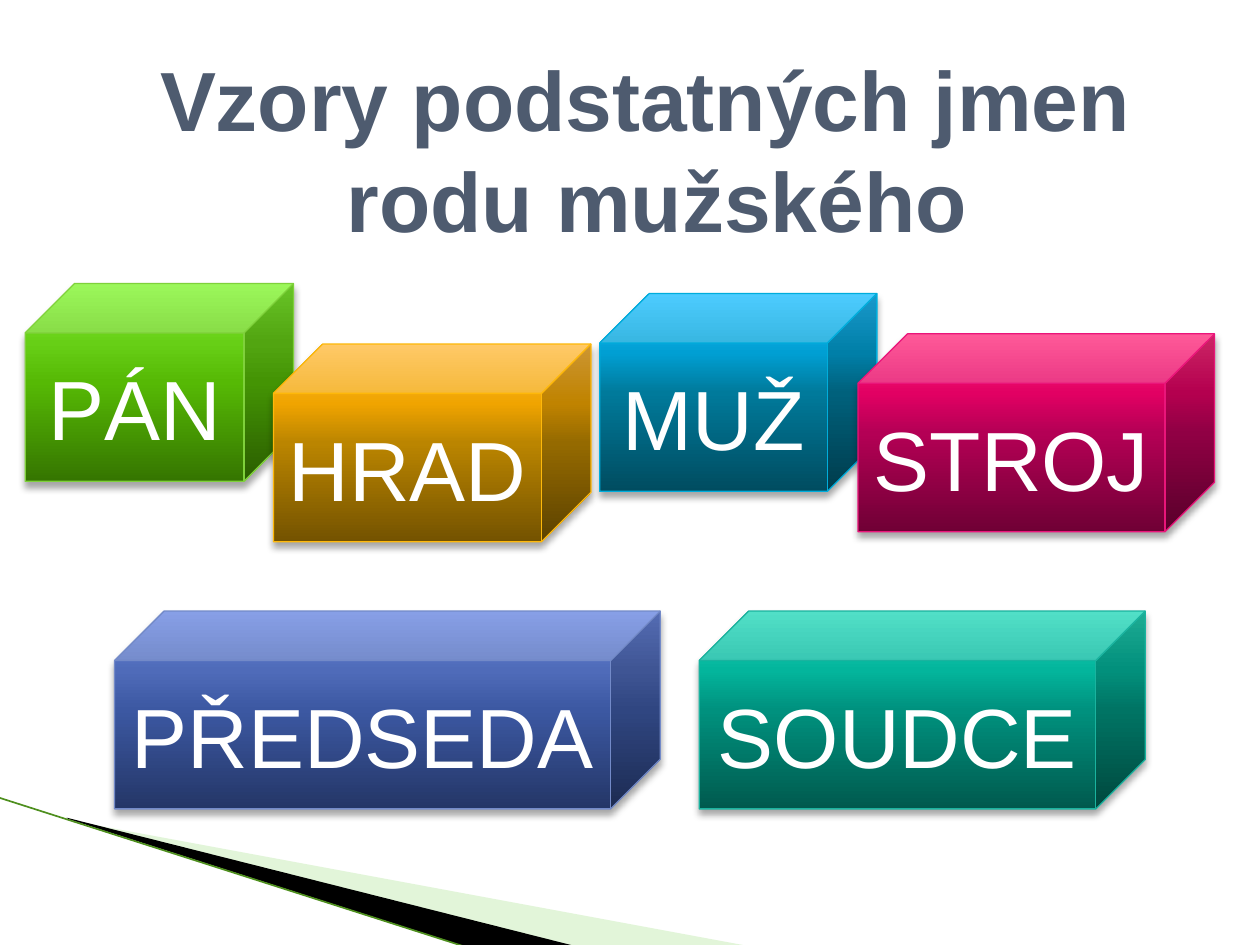
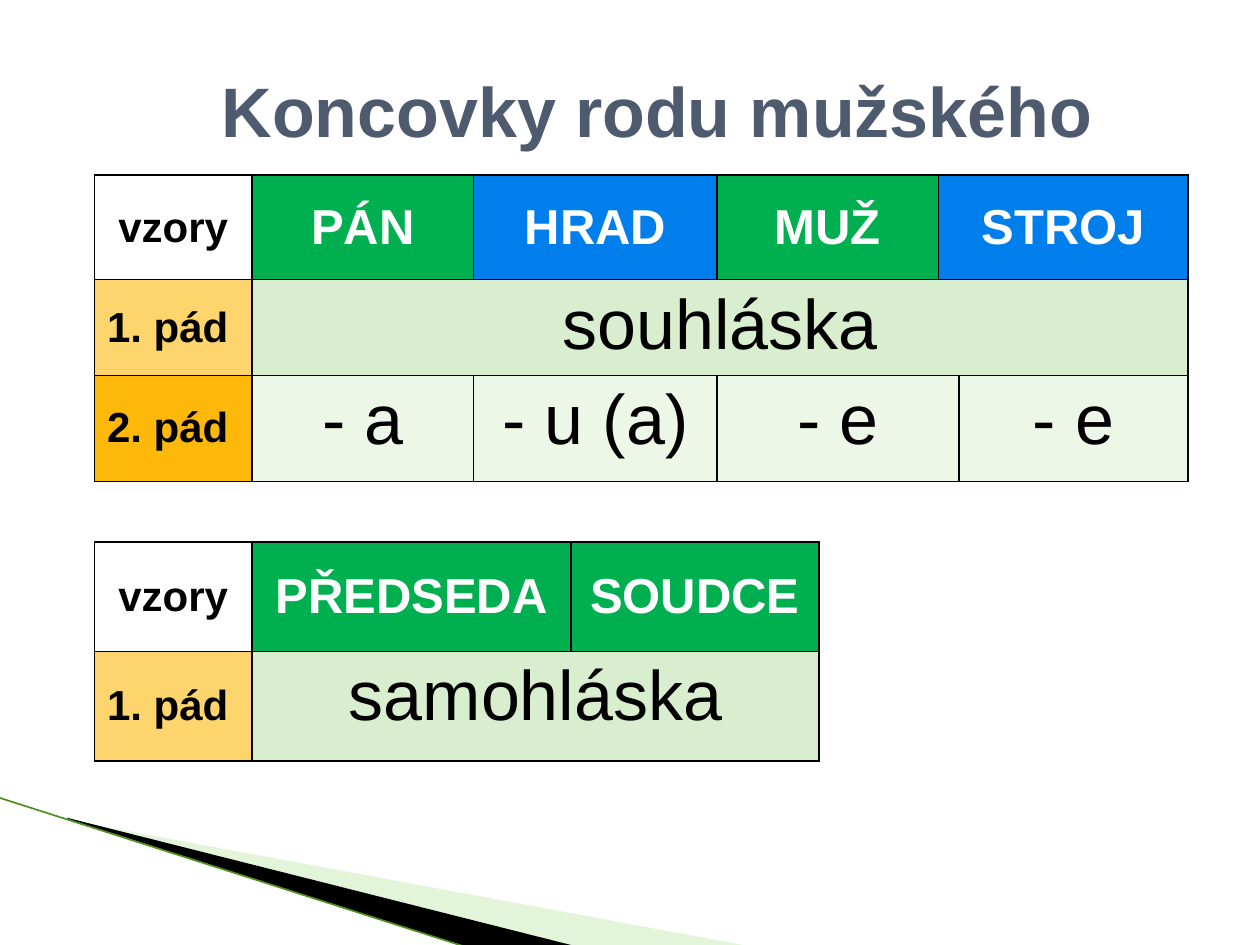
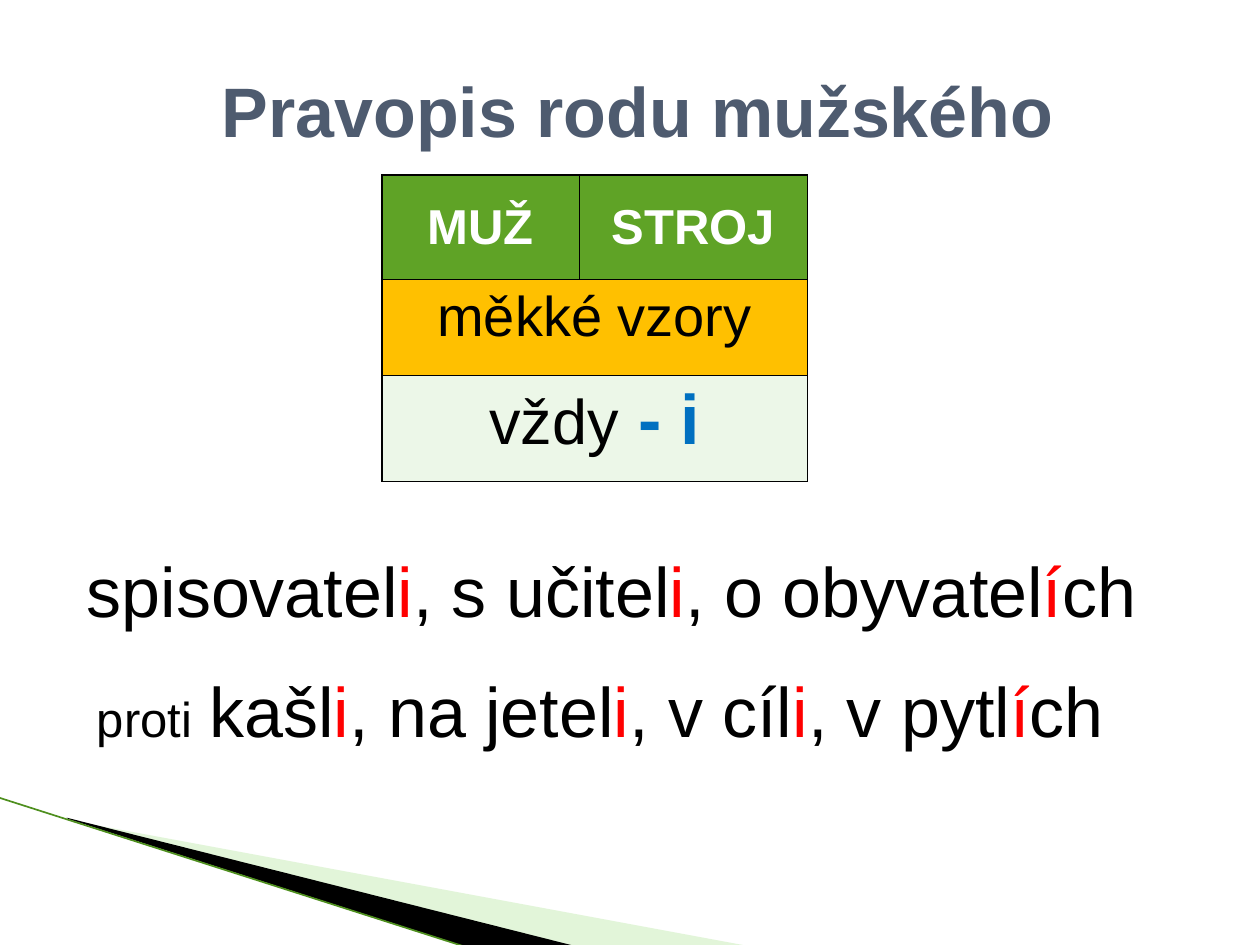
from dataclasses import dataclass
from itertools import cycle

from lxml.etree import SubElement
from pptx import Presentation
from pptx.dml.color import RGBColor
from pptx.enum.shapes import MSO_CONNECTOR, MSO_SHAPE
from pptx.enum.text import MSO_ANCHOR, MSO_AUTO_SIZE, PP_ALIGN
from pptx.oxml.ns import qn
from pptx.util import Inches, Pt

FONT = "Arial"
BLACK = RGBColor(0x00, 0x00, 0x00)
WHITE = RGBColor(0xFF, 0xFF, 0xFF)
SLATE = RGBColor(0x4E, 0x5B, 0x6F)
RED = RGBColor(0xFF, 0x00, 0x00)
BLUE = RGBColor(0x00, 0x70, 0xC0)
SKY = RGBColor(0x00, 0x7E, 0xEB)
GREEN = RGBColor(0x00, 0xB0, 0x50)
LEAF = RGBColor(0x5F, 0xA3, 0x26)
MINT = RGBColor(0xD8, 0xEE, 0xCE)
PALE = RGBColor(0xEC, 0xF7, 0xE8)
SAND = RGBColor(0xFE, 0xD4, 0x6C)
AMBER = RGBColor(0xFE, 0xB8, 0x0A)
GOLD = RGBColor(0xFF, 0xC0, 0x00)
LIME = RGBColor(0xB8, 0xE7, 0xA1)
MOSS = RGBColor(0x4E, 0x8F, 0x1E)

STOPS = (0, 50, 70, 100)
DEPTH = 1.57


@dataclass
class Cube:
    text: str
    left: float
    top: float
    width: float
    shades: str
    edge: str


@dataclass
class Cell:
    text: str
    fill: RGBColor
    size: int = 40
    color: RGBColor = BLACK
    bold: bool = False
    span: int = 1
    mid: bool = False
    align: PP_ALIGN = PP_ALIGN.CENTER


# Text and shared parts
def put(para, text: str, *, size: float, color: RGBColor = BLACK,
        bold: bool = False) -> None:
    for i, line in enumerate(text.split("\n")):
        if i:
            para.add_line_break()
        run = para.add_run()
        run.text = line
        font = run.font
        font.name, font.size, font.bold = FONT, Pt(size), bold
        font.color.rgb = color


def wedge(slide, points: list, fill: RGBColor):
    spots = [(Inches(x), Inches(y)) for x, y in points]
    path = slide.shapes.build_freeform(*spots[0], scale=1.0)
    path.add_line_segments(spots[1:], close=True)
    shape = path.convert_to_shape()
    shape.shadow.inherit = False
    shape.fill.solid()
    shape.fill.fore_color.rgb = fill
    shape.line.fill.background()
    return shape


def band(slide) -> None:
    tint = wedge(slide, [(0.55, 6.51), (5.95, 7.51), (4.56, 7.51), (0.55, 6.5)], LIME)
    clr = tint._element.spPr.find(".//" + qn("a:srgbClr"))
    SubElement(clr, qn("a:alpha"), val="40000")
    wedge(slide, [(0.53, 6.49), (4.57, 7.51), (3.72, 7.52), (0.54, 6.5)], BLACK)
    line = slide.shapes.add_connector(
        MSO_CONNECTOR.STRAIGHT, Inches(-0.01), Inches(6.33), Inches(3.71), Inches(7.52))
    line.line.color.rgb = MOSS
    line.line.width = Pt(0.95)
    SubElement(line._element.spPr, qn("a:effectLst"))


def start(deck, text: str, *, box=(0.43, 0.21, 8.98, 1.25), size: int = 40,
          first: float = 1.23, rest: float = 1.23):
    """Add a slide with the band and a title; first and rest are line indents."""
    slide = deck.slides.add_slide(deck.slide_layouts[5])
    band(slide)
    title = slide.shapes.title
    title.left, title.top, title.width, title.height = map(Inches, box)
    frame = title.text_frame
    frame.auto_size = MSO_AUTO_SIZE.NONE
    frame.vertical_anchor = MSO_ANCHOR.MIDDLE
    frame.margin_top = Inches(0.12)
    para = frame.paragraphs[0]
    para.alignment = PP_ALIGN.LEFT
    para.line_spacing = Pt(size * 1.2)
    props = para._p.get_or_add_pPr()
    props.set("marL", str(Inches(rest)))
    props.set("indent", str(Inches(first - rest)))
    put(para, text, size=size, color=SLATE, bold=True)
    return slide


# Cubes
def block(slide, cube: Cube) -> None:
    shape = slide.shapes.add_shape(
        MSO_SHAPE.CUBE, Inches(cube.left), Inches(cube.top),
        Inches(cube.width), Inches(DEPTH))
    shape.line.color.rgb = RGBColor.from_string(cube.edge)
    shape.line.width = Pt(0.75)
    shape.fill.gradient()
    shape.fill.gradient_angle = 90
    props = shape._element.spPr
    stops = props.find(".//" + qn("a:gsLst"))
    stops.clear()
    for pos, shade in zip(STOPS, cube.shades.split()):
        stop = SubElement(stops, qn("a:gs"), pos=str(pos * 1000))
        SubElement(stop, qn("a:srgbClr"), val=shade)
    shape.shadow.inherit = False
    cast = SubElement(props.find(qn("a:effectLst")), qn("a:outerShdw"),
                      blurRad=str(Pt(4)), dist=str(Pt(3)), dir="5400000", rotWithShape="0")
    tone = SubElement(cast, qn("a:srgbClr"), val=str(BLACK))
    SubElement(tone, qn("a:alpha"), val="35000")
    frame = shape.text_frame
    frame.vertical_anchor = MSO_ANCHOR.MIDDLE
    para = frame.paragraphs[0]
    para.alignment = PP_ALIGN.CENTER
    put(para, cube.text, size=48, color=WHITE)


# Tables
def head(text: str, fill: RGBColor, span: int = 1) -> Cell:
    return Cell(text, fill, 28, WHITE, True, span, True)


def side(text: str, fill: RGBColor, align: PP_ALIGN = PP_ALIGN.LEFT) -> Cell:
    return Cell(text, fill, 24, BLACK, True, 1, True, align)


def edge(cell) -> None:
    props = cell._tc.get_or_add_tcPr()
    for tag in ("a:lnL", "a:lnR", "a:lnT", "a:lnB"):
        line = SubElement(props, qn(tag), w=str(Pt(1)))
        fill = SubElement(line, qn("a:solidFill"))
        SubElement(fill, qn("a:srgbClr"), val=str(BLACK))


def grid(slide, left: float, top: float, cols: list, rows: list, cells: list):
    table = slide.shapes.add_table(
        len(rows), len(cols), Inches(left), Inches(top),
        Inches(sum(cols)), Inches(sum(rows))).table
    table.first_row = table.horz_banding = False
    for col, width in zip(table.columns, cols):
        col.width = Inches(width)
    for row, height in zip(table.rows, rows):
        row.height = Inches(height)
    for r, line in enumerate(cells):
        c = 0
        for item in line:
            cell, end = table.cell(r, c), c + item.span
            if item.span > 1:
                cell.merge(table.cell(r, end - 1))
            for part in (table.cell(r, n) for n in range(c, end)):
                edge(part)
                part.fill.solid()
                part.fill.fore_color.rgb = item.fill
            cell.vertical_anchor = MSO_ANCHOR.MIDDLE if item.mid else MSO_ANCHOR.TOP
            para = cell.text_frame.paragraphs[0]
            para.alignment = item.align
            if item.text:
                put(para, item.text, size=item.size, color=item.color, bold=item.bold)
            c = end
    return table


# Example lines: endings between bars are red
def sample(slide, left: float, top: float, width: float, text: str, lead: str = "") -> None:
    box = slide.shapes.add_textbox(Inches(left), Inches(top), Inches(width), Inches(0.77))
    frame = box.text_frame
    frame.word_wrap = True
    frame.auto_size = MSO_AUTO_SIZE.SHAPE_TO_FIT_TEXT
    para = frame.paragraphs[0]
    if lead:
        put(para, lead, size=28)
        put(para, " ", size=36)
    for part, color in zip(text.split("|"), cycle((BLACK, RED))):
        put(para, part, size=40, color=color)


CUBES = [
    Cube("PÁN", 0.2, 2.25, 2.13, "357500 56B905 67CF16 82F631", "7FD13B"),
    Cube("MUŽ", 4.76, 2.33, 2.2, "004C60 007A9B 009FD3 21C0FF", "00ADDC"),
    Cube("HRAD", 2.17, 2.73, 2.52, "745300 BB8500 F0A400 FFBC42", "FEB80A"),
    Cube("STROJ", 6.81, 2.65, 2.83, "700035 B40055 E20063 FF307F", "EA157A"),
    Cube("PŘEDSEDA", 0.91, 4.85, 4.33, "243667 3C58A2 4F6BB9 6988E0", "738AC8"),
    Cube("SOUDCE", 5.55, 4.85, 3.54, "005A4E 00917E 03B59C 26D7BA", "1AB39F"),
]
ROWS = [0.83, 0.76, 0.84]
CORNER = side("vzory", WHITE, PP_ALIGN.CENTER)
FIRST = side("1. pád", SAND)


def main() -> None:
    deck = Presentation()
    deck.slide_width, deck.slide_height = Inches(10), Inches(7.5)

    # Patterns
    slide = start(deck, "Vzory podstatných jmen\nrodu mužského",
                  box=(0.98, 0.52, 8.2, 1.25), size=48, first=0.19, rest=1.67)
    for cube in CUBES:
        block(slide, cube)

    # Endings
    slide = start(deck, "Koncovky rodu mužského")
    grid(slide, 0.75, 1.39, [1.25, 1.76, 1.93, 1.76, 0.16, 1.82], ROWS, [
        [CORNER, head("PÁN", GREEN), head("HRAD", SKY), head("MUŽ", GREEN),
         head("STROJ", SKY, 2)],
        [FIRST, Cell("souhláska", MINT, span=5)],
        [side("2. pád", AMBER), Cell("- a", PALE), Cell("- u (a)", PALE),
         Cell("- e", PALE, span=2), Cell("- e", PALE)],
    ])
    grid(slide, 0.75, 4.3, [1.25, 2.53, 1.97], [0.87, 0.87], [
        [CORNER, head("PŘEDSEDA", GREEN), head("SOUDCE", GREEN)],
        [FIRST, Cell("samohláska", MINT, span=2)],
    ])

    # Spelling
    slide = start(deck, "Pravopis rodu mužského")
    table = grid(slide, 3.03, 1.39, [1.57, 1.81], ROWS, [
        [head("MUŽ", LEAF), head("STROJ", LEAF)],
        [Cell("měkké vzory", GOLD, 32, span=2)],
        [Cell("vždy", PALE, 36, span=2)],
    ])
    para = table.cell(2, 0).text_frame.paragraphs[0]
    put(para, " ", size=40)
    put(para, "- i", size=40, color=BLUE, bold=True)
    sample(slide, 0.59, 4.3, 8.66, "spisovatel|i|, s učitel|i|, o obyvatel|í|ch")
    sample(slide, 0.67, 5.25, 8.35,
           "kašl|i|, na jetel|i|, v cíl|i|, v pytl|í|ch", lead="proti")

    deck.save("out.pptx")


if __name__ == "__main__":
    main()
